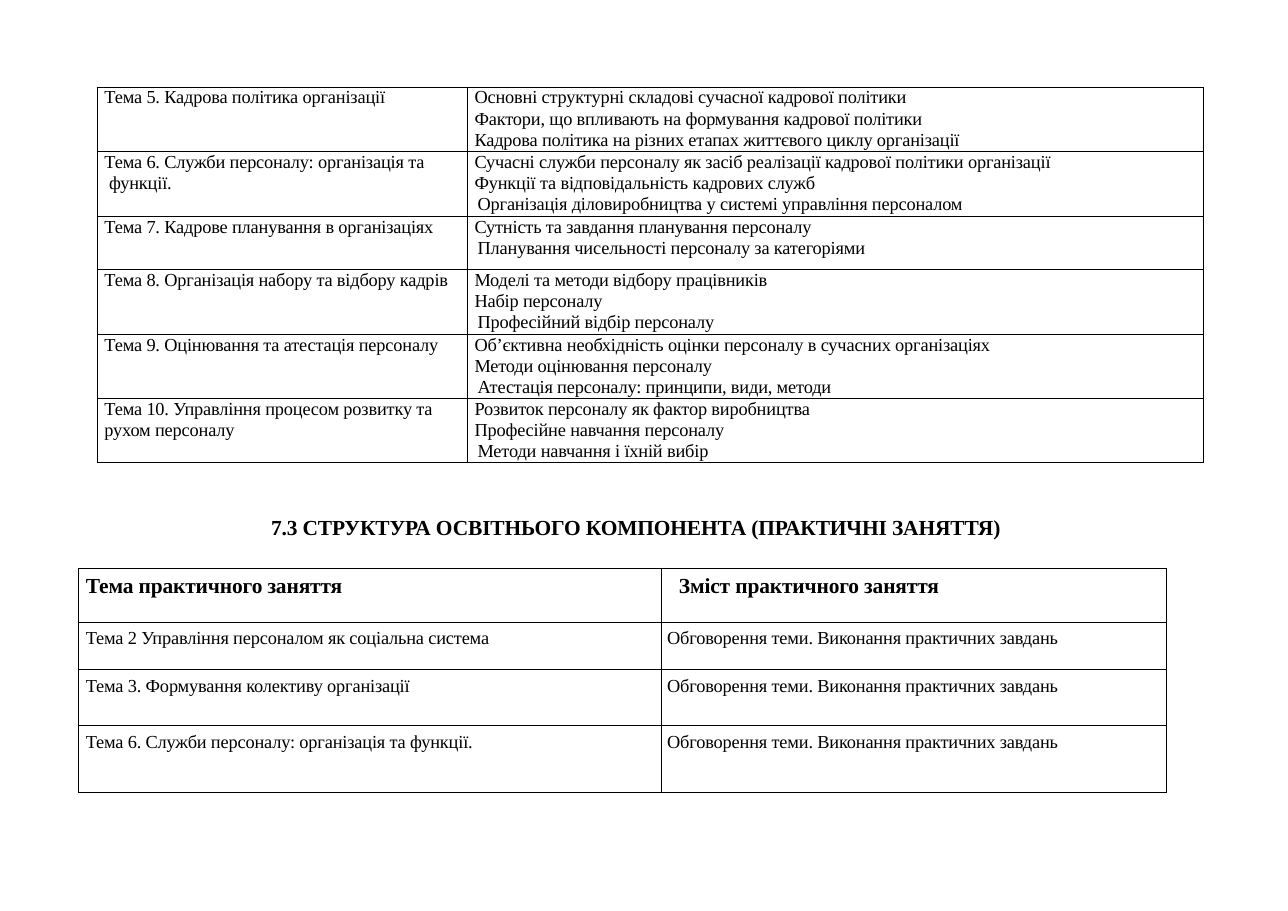
from dataclasses import dataclass
from typing import Optional

from lxml import etree
from pptx import Presentation
from pptx.dml.color import RGBColor
from pptx.enum.text import MSO_ANCHOR, MSO_AUTO_SIZE, PP_ALIGN
from pptx.oxml.ns import qn
from pptx.util import Pt

LEFT = PP_ALIGN.LEFT
TOP = MSO_ANCHOR.TOP
NO_AUTOFIT = MSO_AUTO_SIZE.NONE
TITLE_ONLY = 5


@dataclass(frozen=True)
class Theme:
    font: str = "Times New Roman"
    ink: str = "000000"
    body: float = 12
    heading: float = 14
    tracking: float = -0.1
    thin: float = 0.5
    thick: float = 1


@dataclass(frozen=True)
class Line:
    text: str
    indent: float = 5
    leading: Optional[float] = None
    hang: float = 0
    bold: bool = False


@dataclass(frozen=True)
class Grid:
    left: float
    top: float
    cols: list[float]
    heights: list[float]
    rows: list[list[list[Line]]]
    inset: float = 0
    thick_right: bool = False
    thick_below: tuple[tuple[int, int], ...] = ()


THEME = Theme()


def topic(text: str, hang: float = 0) -> list[Line]:
    return [Line(text, 5 + hang, 13.6, hang)]


def contents(*texts: str) -> list[Line]:
    """All lines but the last align with the topic; the last is set in a little."""
    first = [Line(t, 5, 13.8) for t in texts[:-1]]
    return first + [Line(texts[-1], 7, 13.4)]


def header(text: str, indent: float) -> list[Line]:
    return [Line(text, indent, bold=True)]


def practice(text: str) -> list[list[Line]]:
    return [[Line(text)], [Line("Обговорення теми. Виконання практичних завдань", 4)]]


LECTURES = Grid(
    63.3, 56.8, [241.8, 481.6], [42.2, 42.6, 34.6, 42.6, 41.8, 41.8],
    [
        [topic("Тема 5. Кадрова політика організації"),
         [Line(t, 5, 13.8) for t in (
             "Основні структурні складові сучасної кадрової політики",
             "Фактори, що впливають на формування кадрової політики",
             "Кадрова політика на різних етапах життєвого циклу організації")]],
        [topic("Тема 6. Служби персоналу: організація та функції.", 3),
         contents("Сучасні служби персоналу як засіб реалізації кадрової політики організації",
                  "Функції та відповідальність кадрових служб",
                  "Організація діловиробництва у системі управління персоналом")],
        [topic("Тема 7. Кадрове планування в організаціях"),
         contents("Сутність та завдання планування персоналу",
                  "Планування чисельності персоналу за категоріями")],
        [topic("Тема 8. Організація набору та відбору кадрів"),
         contents("Моделі та методи відбору працівників",
                  "Набір персоналу",
                  "Професійний відбір персоналу")],
        [topic("Тема 9. Оцінювання та атестація персоналу"),
         contents("Об’єктивна необхідність оцінки персоналу в сучасних організаціях",
                  "Методи оцінювання персоналу",
                  "Атестація персоналу: принципи, види, методи")],
        [topic("Тема 10. Управління процесом розвитку та рухом персоналу"),
         contents("Розвиток персоналу як фактор виробництва",
                  "Професійне навчання персоналу",
                  "Методи навчання і їхній вибір")],
    ],
)

PRACTICE = Grid(
    51.1, 371.7, [380.9, 330.3], [35, 31, 36.7, 43.3],
    [
        [header("Тема практичного заняття", 5), header("Зміст практичного заняття", 11.7)],
        practice("Тема 2 Управління персоналом як соціальна система"),
        practice("Тема 3. Формування колективу організації"),
        practice("Тема 6. Служби персоналу: організація та функції."),
    ],
    inset=4, thick_right=True, thick_below=((0, 0), (0, 1), (1, 1)),
)


def write(tf, lines: list[Line]) -> None:
    for i, line in enumerate(lines):
        p = tf.paragraphs[0] if i == 0 else tf.add_paragraph()
        p.alignment = LEFT
        p.space_before = Pt(0)
        p.line_spacing = Pt(line.leading) if line.leading else 1.0
        pPr = p._p.get_or_add_pPr()
        pPr.set("marL", str(Pt(line.indent)))
        pPr.set("indent", str(Pt(-line.hang)))
        p.font.name = THEME.font
        p.font.size = Pt(THEME.heading if line.bold else THEME.body)
        p.font.bold = line.bold
        p.font.color.rgb = RGBColor.from_string(THEME.ink)
        r = p.add_run()
        r.text = line.text
        r._r.get_or_add_rPr().set("spc", str(round(THEME.tracking * 100)))


def set_borders(cell, widths: dict[str, float]) -> None:
    tcPr = cell._tc.get_or_add_tcPr()
    for i, (side, width) in enumerate(widths.items()):
        ln = etree.Element(qn(f"a:ln{side}"), w=str(Pt(width)))
        fill = etree.SubElement(ln, qn("a:solidFill"))
        etree.SubElement(fill, qn("a:srgbClr"), val=THEME.ink)
        tcPr.insert(i, ln)


def draw_grid(s, grid: Grid) -> None:
    table = s.shapes.add_table(
        len(grid.rows), len(grid.cols), Pt(grid.left), Pt(grid.top),
        Pt(sum(grid.cols)), Pt(sum(grid.heights))).table
    table.first_row = table.horz_banding = False
    for column, width in zip(table.columns, grid.cols):
        column.width = Pt(width)
    for y, (row, height) in enumerate(zip(grid.rows, grid.heights)):
        table.rows[y].height = Pt(height)
        for x, lines in enumerate(row):
            cell = table.cell(y, x)
            cell.margin_left = cell.margin_right = cell.margin_bottom = 0
            cell.margin_top = Pt(grid.inset)
            cell.vertical_anchor = TOP
            cell.fill.background()
            write(cell.text_frame, lines)
            right = grid.thick_right and x == len(row) - 1
            above, below = (y - 1, x) in grid.thick_below, (y, x) in grid.thick_below
            set_borders(cell, {
                side: THEME.thick if heavy else THEME.thin
                for side, heavy in (("L", False), ("R", right), ("T", above), ("B", below))})


def draw_heading(s, text: str) -> None:
    sp = s.shapes.title
    sp.left, sp.top, sp.width, sp.height = Pt(176.4), Pt(336), Pt(489.6), Pt(18.7)
    tf = sp.text_frame
    tf.margin_left = tf.margin_top = tf.margin_right = tf.margin_bottom = 0
    tf.word_wrap = True
    tf.auto_size = NO_AUTOFIT
    tf.vertical_anchor = TOP
    write(tf, header(text, 0.7))


def main() -> None:
    prs = Presentation()
    prs.slide_width, prs.slide_height = Pt(841.68), Pt(595.44)
    s = prs.slides.add_slide(prs.slide_layouts[TITLE_ONLY])
    draw_grid(s, LECTURES)
    draw_heading(s, "7.3 СТРУКТУРА ОСВІТНЬОГО КОМПОНЕНТА (ПРАКТИЧНІ ЗАНЯТТЯ)")
    draw_grid(s, PRACTICE)
    prs.save("out.pptx")


if __name__ == "__main__":
    main()
